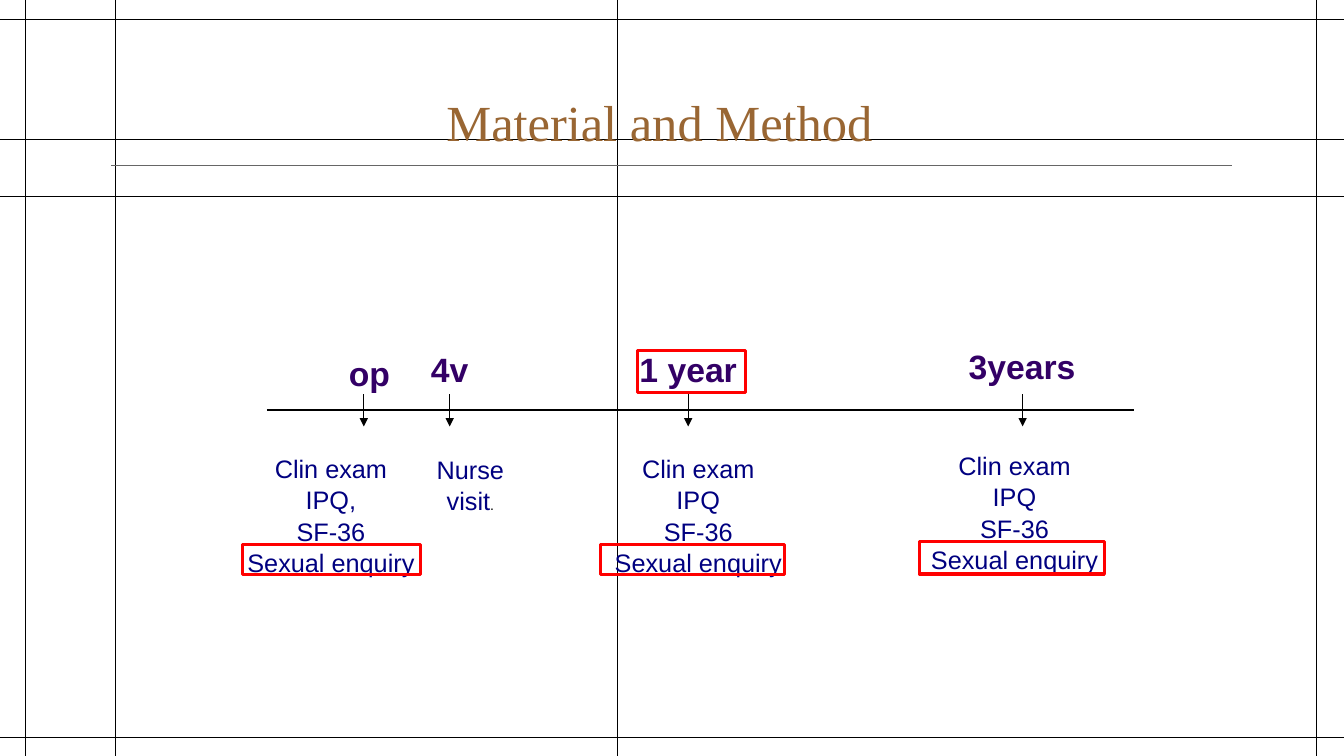
from lxml import etree
from pptx import Presentation
from pptx import util as u
from pptx.dml.color import RGBColor
from pptx.enum import shapes, text
from pptx.oxml.ns import qn

BLACK = RGBColor(0x00, 0x00, 0x00)
GRAY = RGBColor(0x66, 0x66, 0x66)
BROWN = RGBColor(0x99, 0x66, 0x33)
PURPLE = RGBColor(0x33, 0x00, 0x66)
NAVY = RGBColor(0x00, 0x00, 0x80)
RED = RGBColor(0xFF, 0x00, 0x00)
WIDE, HIGH = 13.3, 7.48


class Board:
    def __init__(self, slide):
        self.items = slide.shapes
        self.font = "Arial"

    def line(self, x1, y1, x2, y2, color=BLACK, width=0.75, arrow=False):
        ends = [u.Inches(n) for n in (x1, y1, x2, y2)]
        link = self.items.add_connector(shapes.MSO_CONNECTOR.STRAIGHT, *ends)
        link.line.color.rgb = color
        link.line.width = u.Pt(width)
        props = link._element.spPr
        if arrow:
            etree.SubElement(props.find(qn("a:ln")), qn("a:tailEnd"), type="triangle")
        etree.SubElement(props, qn("a:effectLst"))

    def text(self, area, lines, size, color, bold=False, font=None,
             anchor=text.MSO_ANCHOR.TOP, pitch=1.0):
        box = self.items.add_textbox(*[u.Inches(n) for n in area])
        frame = box.text_frame
        frame.word_wrap = False
        frame.vertical_anchor = anchor
        for i, words in enumerate(lines):
            para = frame.paragraphs[0] if i == 0 else frame.add_paragraph()
            para.alignment = text.PP_ALIGN.CENTER
            para.line_spacing = pitch
            self.run(para, words, size, color, bold, font)
        return frame

    def run(self, para, words, size, color, bold=False, font=None):
        run = para.add_run()
        run.text = words
        run.font.name = font or self.font
        run.font.size = u.Pt(size)
        run.font.bold = bold
        run.font.color.rgb = color

    def frame(self, *area):
        box = self.items.add_shape(shapes.MSO_SHAPE.RECTANGLE,
                                   *[u.Inches(n) for n in area])
        box.shadow.inherit = False
        box.fill.background()
        box.line.color.rgb = RED
        box.line.width = u.Pt(2.25)


def main():
    deck = Presentation()
    deck.slide_width, deck.slide_height = u.Inches(WIDE), u.Inches(HIGH)
    board = Board(deck.slides.add_slide(deck.slide_layouts[6]))

    for y in (0.19, 1.38, 1.94, 7.3):
        board.line(0, y, WIDE, y)
    for x in (0.25, 1.14, 6.11, 13.03):
        board.line(x, 0, x, HIGH)
    board.line(1.1, 1.64, 12.19, 1.64, GRAY)
    board.text((2.43, 0.3, 8.32, 1.25), ["Material and Method "], 36, BROWN,
               font="Times New Roman", anchor=text.MSO_ANCHOR.BOTTOM)

    board.line(2.64, 4.06, 11.22, 4.06, width=1.5)
    for x in (3.6, 4.45, 6.81, 10.12):
        board.line(x, 3.9, x, 4.22, arrow=True)

    for label, x, y, width in (("op", 3.34, 3.44, 0.63), ("4v", 4.16, 3.4, 0.58),
                               ("1 year", 6.22, 3.4, 1.18), ("3years", 9.48, 3.37, 1.27)):
        board.text((x, y, width, 0.5), [label], 24, PURPLE, bold=True)

    for x, y, width, form in ((2.34, 4.42, 1.87, "IPQ,"), (5.79, 4.42, 2.24, "IPQ"),
                              (8.86, 4.39, 2.36, "IPQ")):
        exam = ["Clin exam", form, "SF-36", "Sexual enquiry"]
        board.text((x, y, width, 1.31), exam, 18, NAVY, pitch=1.04)
    nurse = board.text((4.16, 4.43, 0.99, 0.71), ["Nurse", "visit"], 18, NAVY, pitch=1.04)
    board.run(nurse.paragraphs[1], ".", 10, BLACK)

    for area in ((2.4, 5.39, 1.76, 0.29), (6.31, 3.47, 1.07, 0.41),
                 (5.94, 5.39, 1.82, 0.29), (9.1, 5.36, 1.83, 0.32)):
        board.frame(*area)

    deck.save("out.pptx")


if __name__ == "__main__":
    main()
